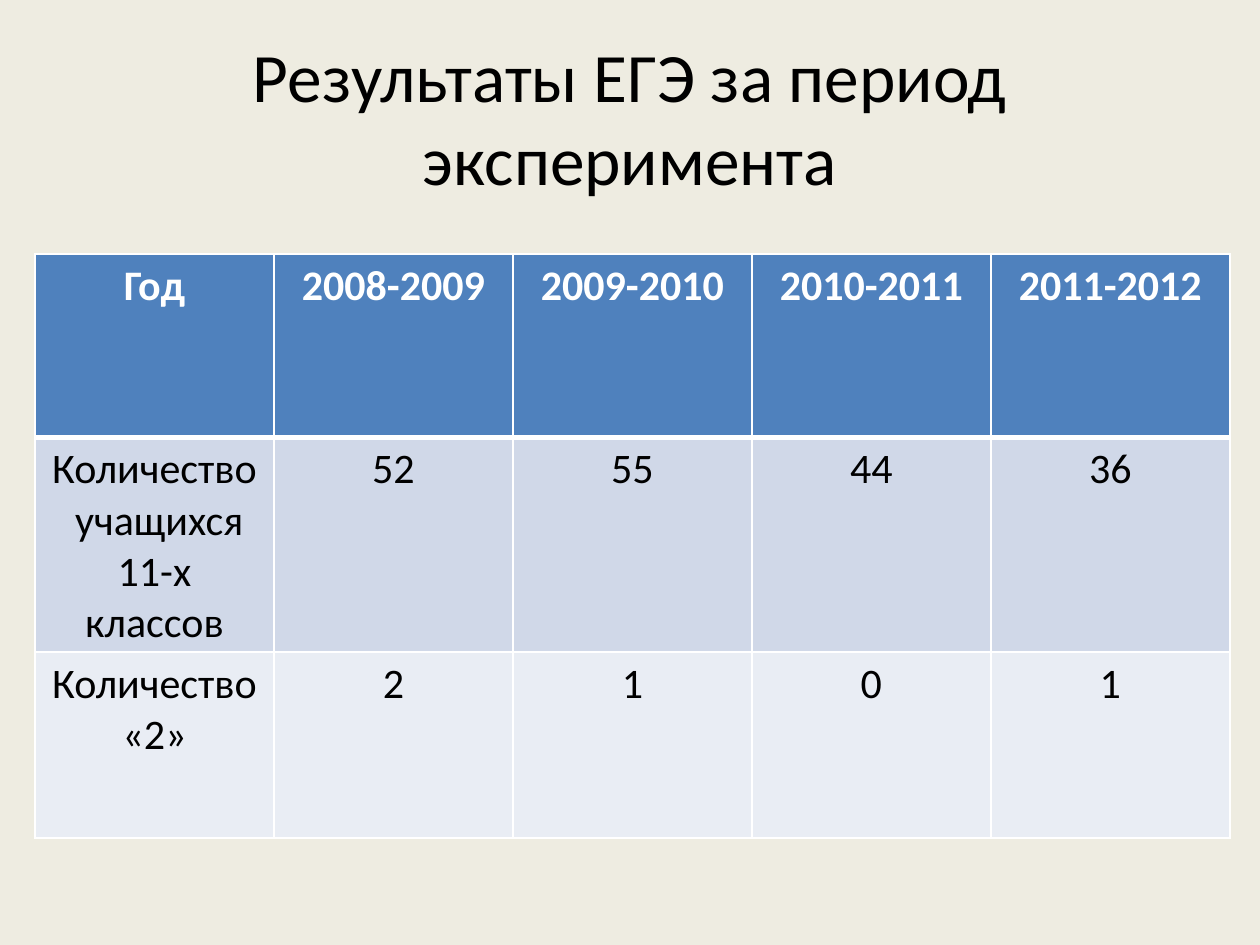
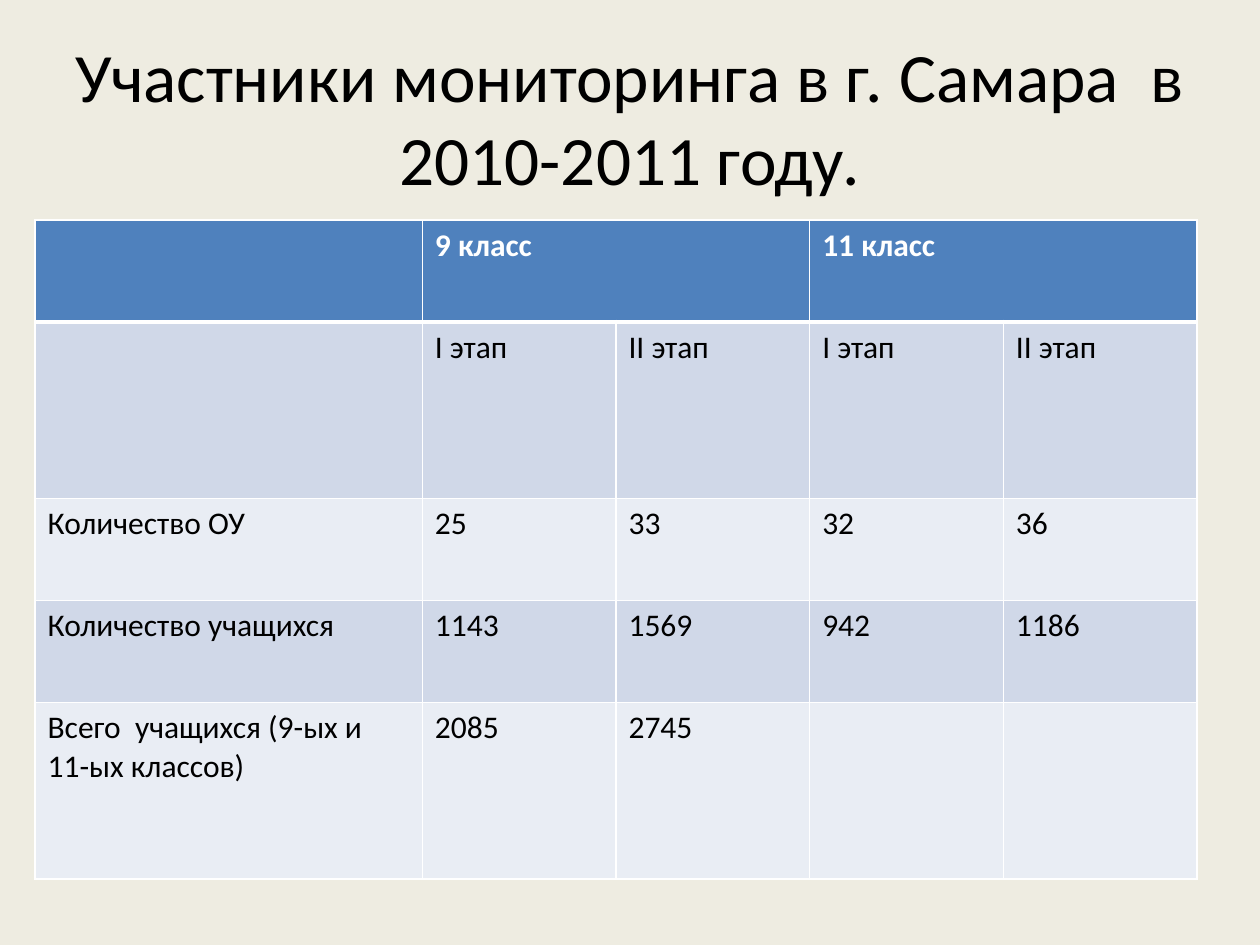
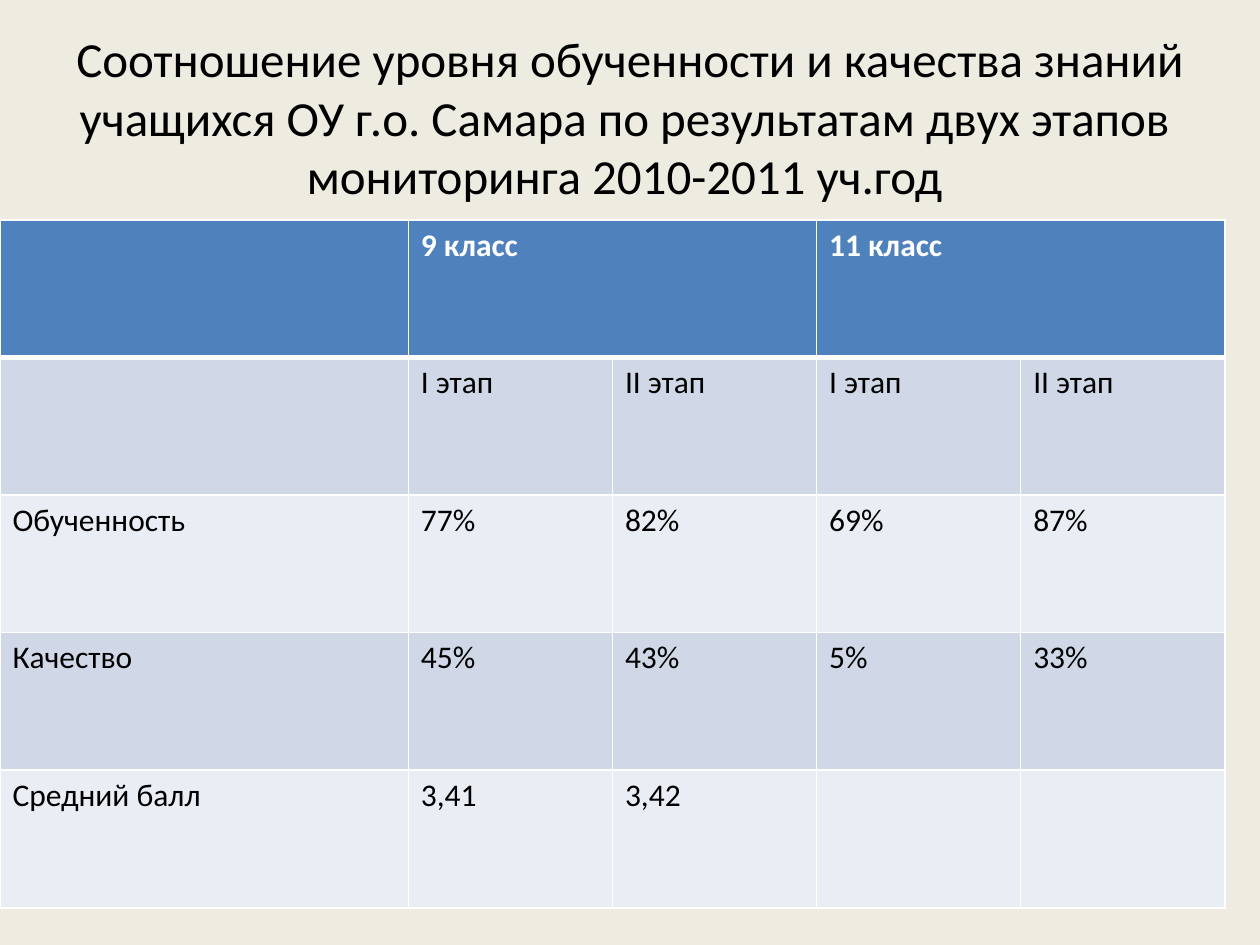
from lxml.etree import SubElement
from pptx import Presentation
from pptx.dml.color import RGBColor
from pptx.enum.text import MSO_ANCHOR, PP_ALIGN
from pptx.oxml.ns import qn
from pptx.util import Emu, Pt

COLORS = {
    "background": "EEECE1",
    "text": "000000",
    "white": "FFFFFF",
    "header": "4F81BD",
    "band_dark": "D0D8E8",
    "band_light": "E9EDF4",
}
FONT = "Calibri"
PX_PER_INCH = 126
GRADE_HEADER = ["", "9 класс", None, "11 класс", None]
STAGE_ROW = ["", "I этап", "II этап", "I этап", "II этап"]
GRADE_COLS = (2, 1, 1, 1, 1)


def px(n):
    return Emu(round(n * 914400 / PX_PER_INCH))


def rgb(name):
    return RGBColor.from_string(COLORS[name])


def shares(total, weights):
    """Split a px length in proportion to the weights."""
    return [px(total * w / sum(weights)) for w in weights]


class Deck:
    def __init__(self):
        self.prs = Presentation()
        self.prs.slide_width = px(1260)
        self.prs.slide_height = px(945)
        self.s = None

    def slide(self, title, size=39.6):
        self.s = self.prs.slides.add_slide(self.prs.slide_layouts[6])
        fill = self.s.background.fill
        fill.solid()
        fill.fore_color.rgb = rgb("background")
        self.title(title, size)

    def title(self, text, size):
        tf = self.s.shapes.add_textbox(px(63), px(38), px(1134), px(157)).text_frame
        tf.word_wrap = True
        tf.vertical_anchor = MSO_ANCHOR.MIDDLE
        tf.text = text
        self.format(tf, size, "text", align=PP_ALIGN.CENTER)

    def format(self, tf, size, color, bold=False, align=PP_ALIGN.LEFT):
        for p in tf.paragraphs:
            p.alignment = align
            for r in p.runs:
                r.font.name = FONT
                r.font.size = Pt(size)
                r.font.bold = bold
                r.font.color.rgb = rgb(color)

    def borders(self, cell, top=1, bottom=1):
        tc_pr = cell._tc.get_or_add_tcPr()
        for side, width in (("L", 1), ("R", 1), ("T", top), ("B", bottom)):
            ln = SubElement(tc_pr, qn(f"a:ln{side}"), w=str(Pt(width)))
            fill = SubElement(ln, qn("a:solidFill"))
            SubElement(fill, qn("a:srgbClr"), val=COLORS["white"])

    def table(self, box, cols, heights, rows, size=18, align=PP_ALIGN.LEFT):
        """Add a table; cols and heights are weights, None joins a cell to its left."""
        x, y, w, h = box
        table = self.s.shapes.add_table(
            len(rows), len(cols), px(x), px(y), px(w), px(h)).table
        table.horz_banding = False
        for col, width in zip(table.columns, shares(w, cols)):
            col.width = width
        for row, height in zip(table.rows, shares(h, heights)):
            row.height = height
        for i, texts in enumerate(rows):
            is_header = i == 0
            band = "header" if is_header else "band_dark" if i % 2 else "band_light"
            for j, text in enumerate(texts):
                cell = table.cell(i, j)
                self.borders(cell, top=3 if i == 1 else 1, bottom=3 if is_header else 1)
                cell.fill.solid()
                cell.fill.fore_color.rgb = rgb(band)
                if text is None:
                    table.cell(i, j - 1).merge(cell)
                    continue
                cell.text_frame.text = text
                self.format(cell.text_frame, size, "white" if is_header else "text",
                            is_header, align)


def main():
    deck = Deck()

    deck.slide("Результаты ЕГЭ за период эксперимента")
    deck.table((35, 254, 1195, 556), (1,) * 5, (1.46, 1.48, 1.48), [
        ["Год", "2008-2009", "2009-2010", "2010-2011", "2011-2012"],
        ["Количество  учащихся 11-х классов", "52", "55", "44", "36"],
        ["Количество «2»", "2", "1", "0", "1"],
    ], size=24, align=PP_ALIGN.CENTER)

    deck.slide("Участники мониторинга в г. Самара  в 2010-2011 году.")
    deck.table((35, 220, 1162, 659), GRADE_COLS, (0.81, 1.4, 0.81, 0.81, 1.4), [
        GRADE_HEADER,
        STAGE_ROW,
        ["Количество ОУ", "25", "33", "32", "36"],
        ["Количество учащихся", "1143", "1569", "942", "1186"],
        ["Всего  учащихся (9-ых и 11-ых классов)", "2085", "2745", "", ""],
    ])

    deck.slide("Соотношение уровня обученности и качества знаний учащихся ОУ "
               "г.о. Самара по результатам двух этапов  мониторинга "
               "2010-2011 уч.год ", size=28)
    deck.table((0, 220, 1225, 688), GRADE_COLS, (1,) * 5, [
        GRADE_HEADER,
        STAGE_ROW,
        ["Обученность", "77%", "82%", "69%", "87%"],
        ["Качество", "45%", "43%", "5%", "33%"],
        ["Средний балл", "3,41", "3,42", "", ""],
    ])

    deck.prs.save("out.pptx")


if __name__ == "__main__":
    main()
